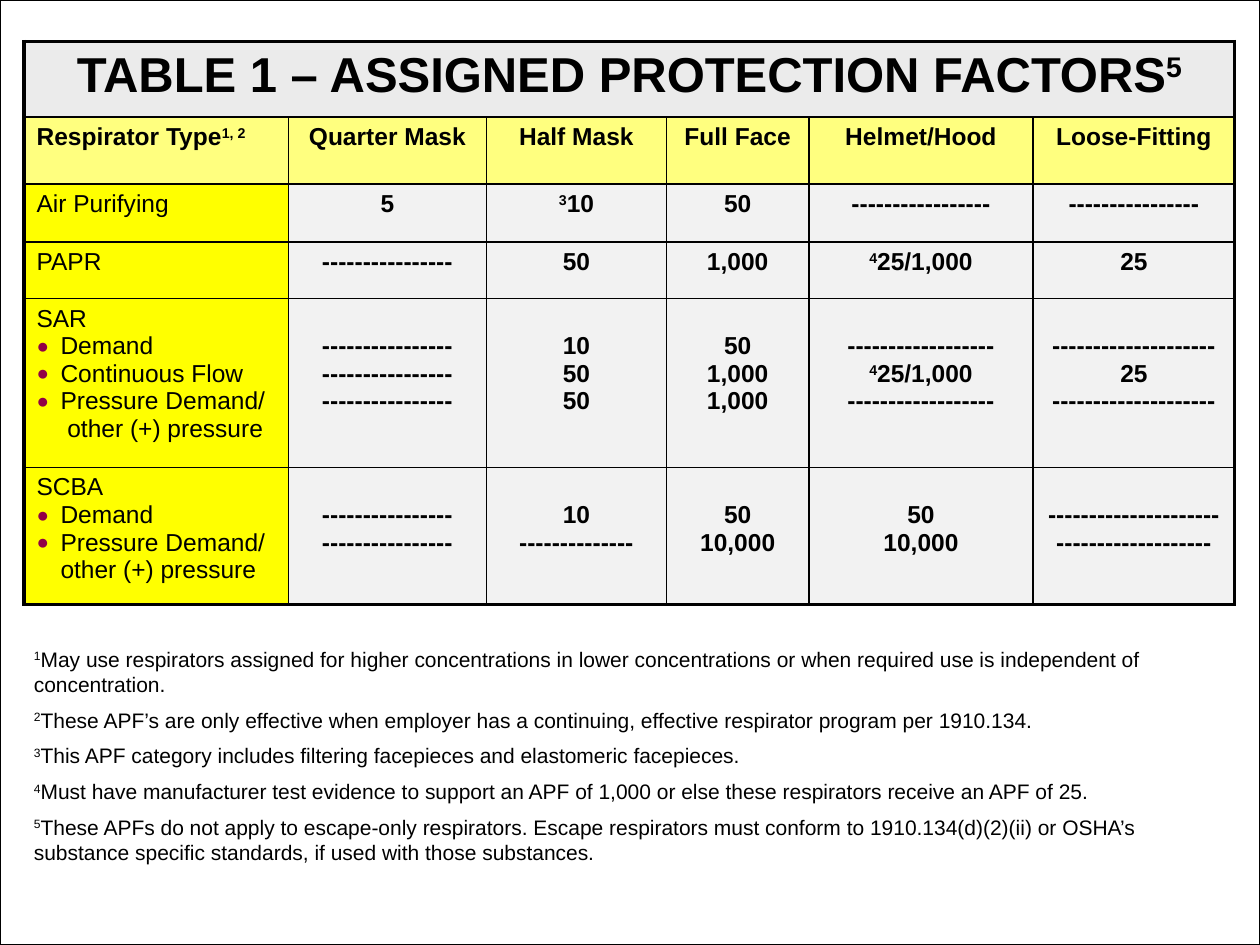
from lxml.etree import SubElement as Sub
from pptx import Presentation
from pptx.dml.color import RGBColor as Rgb
from pptx.enum.shapes import MSO_SHAPE as Shape
from pptx.enum.text import MSO_AUTO_SIZE as Auto, PP_ALIGN as Align
from pptx.oxml.ns import qn
from pptx.util import Inches, Pt

HUES = {"ink": "000000", "page": "FFFFFF", "title": "D9D9D9",
        "type": "FFFF00", "body": "F2F2F2", "dot": "910046"}
WIDE, HIGH = 10, 7.5
COLS = [2.1, 1.57, 1.43, 1.13, 1.78, 1.6]
ROWS = [0.6, 0.53, 0.46, 0.45, 1.34, 1.09]
THIN, THICK = 1, 2.25
PAD, LINE, HANG = 0.05, 0.22, 0.19

TITLE = "TABLE 1 – ASSIGNED PROTECTION FACTORS^5^"
HEADS = ["Respirator Type^1, 2^", "Quarter Mask", "Half Mask",
         "Full Face", "Helmet/Hood", "Loose-Fitting"]
D14, D16, D17, D18, D20 = ("-" * n for n in (14, 16, 17, 18, 20))
FACTORS = [
    [["Air Purifying"], ["5"], ["^3^10"], ["50"], [D17], [D16]],
    [["PAPR"], [D16], ["50"], ["1,000"], ["^4^25/1,000"], ["25"]],
    [["SAR", "Demand", "Continuous Flow", "Pressure Demand/\n other (+) pressure"],
     [D16] * 3, ["10", "50", "50"], ["50", "1,000", "1,000"],
     [D18, "^4^25/1,000", D18], [D20, "25", D20]],
    [["SCBA", "Demand", "Pressure Demand/\nother (+) pressure"],
     [D16] * 2, ["10", D14], ["50", "10,000"], ["50", "10,000"], [D20 * 2]],
]
NOTES = [
    "May use respirators assigned for higher concentrations in lower concentrations "
    "or when required use is independent of concentration.",
    "These APF’s are only effective when employer has a continuing, effective "
    "respirator program per 1910.134.",
    "This APF category includes filtering facepieces and elastomeric facepieces.",
    "Must have manufacturer test evidence to support an APF of 1,000 or else these "
    "respirators receive an APF of 25.",
    "These APFs do not apply to escape-only respirators. Escape respirators must "
    "conform to 1910.134(d)(2)(ii) or OSHA’s substance specific standards, if used "
    "with those substances.",
]


def hue(name):
    return Rgb.from_string(HUES[name])


def hang(para, dot):
    props = para._p.get_or_add_pPr()
    props.set("marL", str(Inches(HANG)))
    props.set("indent", str(-Inches(HANG)))
    if dot:
        tint = Sub(props, qn("a:buClr"))
        Sub(tint, qn("a:srgbClr"), val=HUES["dot"])
        Sub(props, qn("a:buSzPct"), val="84000")
        Sub(props, qn("a:buFont"), typeface="Arial")
        Sub(props, qn("a:buChar"), char="●")


def write(para, text, size, bold=False, align=Align.LEFT):
    para.alignment = align
    font = para.font
    font.name, font.size, font.bold = "Arial", Pt(size), bold
    font.color.rgb = hue("ink")
    for i, part in enumerate(text.split("^")):
        for j, line in enumerate(part.split("\n")):
            if j:
                para.add_line_break()
            if line:
                run = para.add_run()
                run.text = line
                if i % 2:
                    run._r.get_or_add_rPr().set("baseline", "30000")


def fill(frame, lines, size, bold=False, align=Align.LEFT, gap=0, list_up=False):
    for i, text in enumerate(lines):
        para = frame.paragraphs[0] if i == 0 else frame.add_paragraph()
        if i and gap:
            para.space_before = Pt(gap)
        if list_up:
            hang(para, i > 0)
        write(para, text, size, bold, align)


def edge(cell, row, col):
    outer = {"L": col == 0, "R": col == len(COLS) - 1 or row == 0,
             "T": row == 0, "B": row == len(ROWS) - 1}
    props = cell._tc.get_or_add_tcPr()
    for side, thick in outer.items():
        width = Pt(THICK if thick else THIN)
        line = Sub(props, qn(f"a:ln{side}"), w=str(width))
        paint = Sub(line, qn("a:solidFill"))
        Sub(paint, qn("a:srgbClr"), val=HUES["ink"])


def tint(cell, name, half):
    cell.fill.solid()
    cell.fill.fore_color.rgb = hue(name)
    if half:
        color = cell._tc.tcPr.find(qn("a:solidFill")).find(qn("a:srgbClr"))
        Sub(color, qn("a:alpha"), val="50000")


def add_page(slide):
    page = slide.shapes.add_shape(
        Shape.RECTANGLE, 0, 0, Inches(WIDE), Inches(HIGH))
    page.shadow.inherit = False
    page.fill.solid()
    page.fill.fore_color.rgb = hue("page")
    page.line.color.rgb = hue("ink")
    page.line.width = Pt(THIN)


def add_grid(slide):
    grid = slide.shapes.add_table(
        len(ROWS), len(COLS), Inches(0.19), Inches(0.33),
        Inches(sum(COLS)), Inches(sum(ROWS))).table
    grid.first_row = grid.horz_banding = False
    for col, width in zip(grid.columns, COLS):
        col.width = Inches(width)
    for row, height in zip(grid.rows, ROWS):
        row.height = Inches(height)
    grid.cell(0, 0).merge(grid.cell(0, len(COLS) - 1))

    table = [[[TITLE]] + [[]] * (len(COLS) - 1), [[head] for head in HEADS]] + FACTORS
    for r, row in enumerate(table):
        for c, lines in enumerate(row):
            cell = grid.cell(r, c)
            edge(cell, r, c)
            name = "title" if r == 0 else "type" if r == 1 or c == 0 else "body"
            tint(cell, name, r < 2)
            label = r > 0 and c == 0
            listed = len(row[0]) > 1
            drop = LINE if listed and not label else 0
            cell.margin_top = Inches(PAD + drop)
            fill(cell.text_frame, lines, 28 if r == 0 else 14,
                 r < 2 or not label, Align.LEFT if label else Align.CENTER,
                 list_up=label and listed)


def add_notes(slide):
    box = slide.shapes.add_textbox(
        Inches(0.17), Inches(5.08), Inches(9.55), Inches(1.9))
    frame = box.text_frame
    frame.word_wrap = True
    frame.auto_size = Auto.SHAPE_TO_FIT_TEXT
    fill(frame, [f"^{n}^{note}" for n, note in enumerate(NOTES, 1)], 12, gap=6)


def main():
    deck = Presentation()
    deck.slide_width, deck.slide_height = Inches(WIDE), Inches(HIGH)
    slide = deck.slides.add_slide(deck.slide_layouts[6])
    add_page(slide)
    add_grid(slide)
    add_notes(slide)
    deck.save("out.pptx")


if __name__ == "__main__":
    main()
